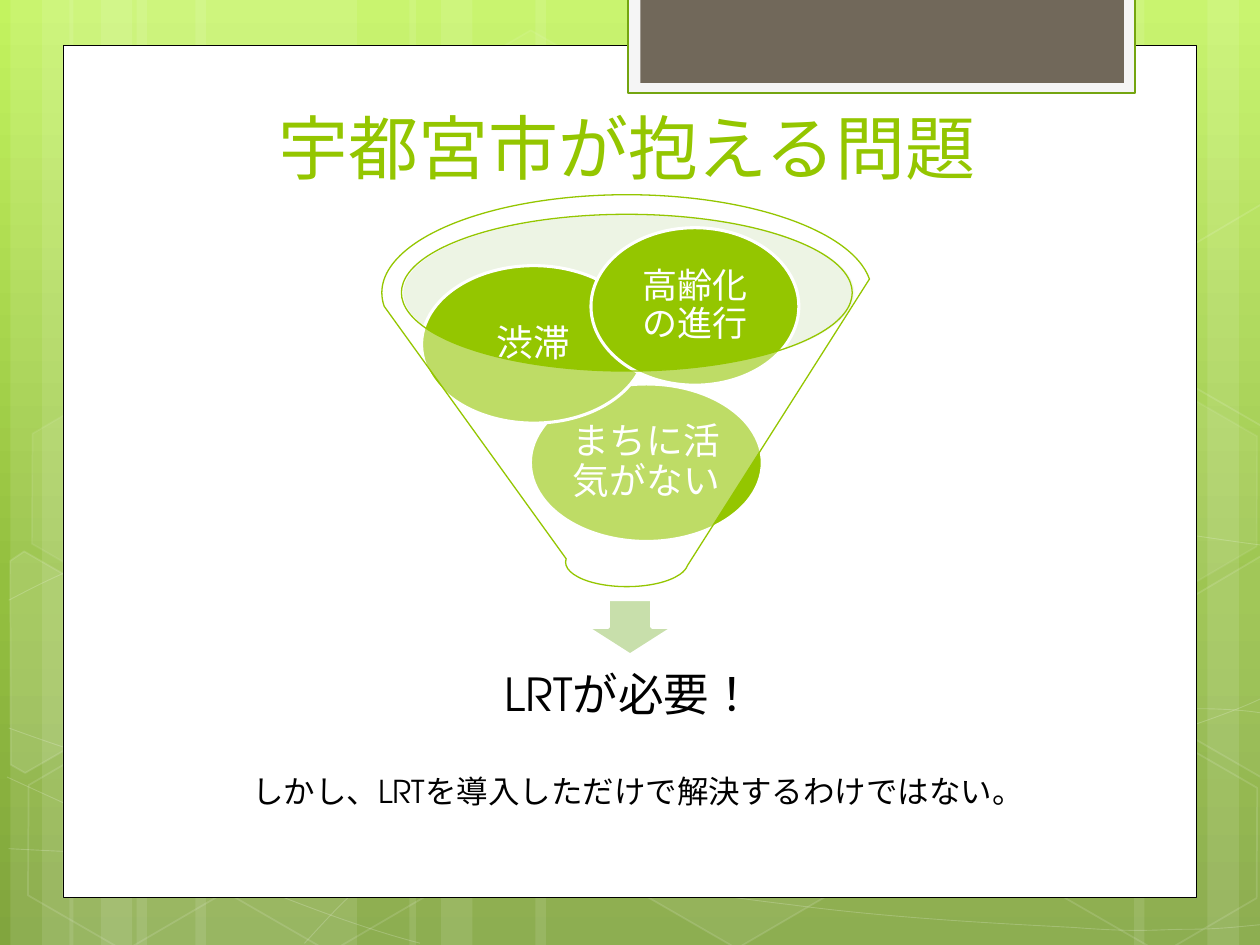
from copy import deepcopy

from lxml import etree
from pptx import Presentation
from pptx.dml.color import RGBColor
from pptx.enum import lang, shapes, text
from pptx.oxml.ns import qn
from pptx.util import Pt

FONT = "TeX Gyre Adventor"
WHITE = RGBColor(0xFF, 0xFF, 0xFF)
BLACK = RGBColor(0, 0, 0)
GREEN = RGBColor(0x94, 0xC6, 0x00)
DARK_GREEN = RGBColor(0x74, 0xA5, 0x10)
PALE_GREEN = RGBColor(0xD2, 0xE5, 0xBD)
ARROW_GREEN = RGBColor(0xC8, 0xDF, 0xAB)
LIGHT_GREY = RGBColor(0xF5, 0xF5, 0xF5)
BROWN = RGBColor(0x71, 0x68, 0x5A)
BACKDROP = [(0, RGBColor(0xC3, 0xF3, 0x5F)), (0.62, RGBColor(0x93, 0xBF, 0x3F)),
            (1, RGBColor(0x81, 0xA5, 0x3E))]

TITLE = "宇都宮市が抱える問題"
RESULT = "LRTが必要！"
CAVEAT = "しかし、LRTを導入しただけで解決するわけではない。"
# label, box, text size
PROBLEMS = [
    ("まちに活気がない", (303.1, 219.4, 132.5, 90), 21),
    ("渋滞", (240.9, 151.8, 128.2, 90), 21),
    ("高齢化の進行", (337.7, 130.1, 118.8, 90), 20),
]

# left, width of the translucent backdrop bars
BARS = [(78, 126), (6, 36), (24, 60), (111.6, 126), (39.6, 36), (57.6, 60),
        (528, 126), (690, 36), (648, 60), (306, 222), (234, 36), (252, 60)]
# start point, then (control, control, end) for each Bezier segment
CURVES = [
    ((5, 485), [(44, 487, 83, 489, 137, 488), (191, 487, 258, 486, 330, 479),
                (402, 472, 504, 458, 570, 444), (636, 431, 703, 409, 725, 397)]),
    ((5, 343), [(26, 332, 47, 321, 87, 310), (128, 300, 186, 284, 250, 279),
                (314, 274, 392, 273, 471, 279), (550, 284, 682, 307, 725, 312)]),
    ((4, 444), [(91, 484, 178, 523, 240, 539)]),
    ((5, 416), [(27, 424, 50, 432, 92, 444), (134, 454, 197, 472, 257, 485),
                (317, 497, 392, 510, 452, 517), (512, 525, 576, 528, 614, 530),
                (652, 533, 662, 531, 680, 531), (699, 531, 712, 529, 725, 528)]),
    ((174, 539), [(187, 525, 200, 510, 217, 498), (235, 485, 259, 470, 279, 460),
                  (300, 450, 312, 446, 338, 438), (364, 431, 413, 421, 438, 416),
                  (464, 411, 467, 411, 490, 410), (512, 408, 547, 405, 572, 405),
                  (597, 404, 638, 405, 638, 405), (654, 405, 670, 405, 686, 405),
                  (699, 405, 711, 406, 718, 407), (724, 408, 722, 407, 724, 408)]),
]
HEX_SIZE = (126, 109.4)
HEX_TILT = 30
# left, top, fill opacity, line opacity (percent)
HEXAGONS = [(240.5, 25.9, 4, 8), (357.8, 424.1, 6, 12), (7.9, 425.5, 0, 12),
            (10.1, 224.6, 7, 8), (125.3, 426.2, 0, 12), (542.2, 326.2, 10, 12),
            (600.5, 427, 0, 12), (600.5, 226.1, 7, 8)]
# hexagons cut off by the slide's edge, before tilting
LEFT_CUT = [(0, 8.7), (4.2, 0), (68, 0), (99.4, 55), (68, 109.4), (58.5, 109.4)]
RIGHT_CUT = [(0, 54.2), (30.5, 0), (37, 0), (97.9, 104), (94.5, 109.4), (31.5, 109.4)]
# outline, left, top, fill opacity
CUT_HEXAGONS = [(LEFT_CUT, -23.8, 330.5, 10), (RIGHT_CUT, 660.2, 319.7, 4),
                (RIGHT_CUT, 660.2, 118.8, 0)]

prs = Presentation()
prs.slide_width, prs.slide_height = Pt(720), Pt(540)
s = prs.slides.add_slide(prs.slide_layouts[5])
KIND = shapes.MSO_SHAPE


def paint(fill, color, opacity):
    """Fill with a colour; no colour or zero opacity leaves no fill."""
    if color is None or not opacity:
        fill.background()
        return
    fill.solid()
    fill.fore_color.rgb = color


def fade(parent, opacity):
    if 0 < opacity < 100:
        clr = parent.find(qn("a:solidFill")).find(qn("a:srgbClr"))
        etree.SubElement(clr, qn("a:alpha")).set("val", str(opacity * 1000))


def style(sp, fill=None, opacity=100, line=None, width=1, line_opacity=100):
    sp.shadow.inherit = False
    paint(sp.fill, fill, opacity)
    paint(sp.line.fill, line, line_opacity)
    props = sp.element.spPr
    if fill is not None:
        fade(props, opacity)
    if line is not None:
        sp.line.width = Pt(width)
        fade(props.find(qn("a:ln")), line_opacity)
    return sp


def add_preset(kind, box, **look):
    return style(s.shapes.add_shape(kind, *map(Pt, box)), **look)


def add_outline(points, closed, **look):
    first, *rest = [(Pt(x), Pt(y)) for x, y in points]
    builder = s.shapes.build_freeform(*first)
    builder.add_line_segments(rest, close=closed)
    return style(builder.convert_to_shape(), **look)


def add_curve(start, segments, **look):
    """Lay out all Bezier points, then join each three into one curve segment."""
    points = [start] + [seg[i:i + 2] for seg in segments for i in (0, 2, 4)]
    sp = add_outline(points, False, **look)
    lines = list(sp.element.iter(qn("a:lnTo")))
    for i in range(0, len(lines), 3):
        curve = etree.Element(qn("a:cubicBezTo"))
        lines[i].addprevious(curve)
        for line in lines[i:i + 3]:
            curve.append(line[0])
            line.getparent().remove(line)


def write(sp, words, size, color, anchor=text.MSO_ANCHOR.MIDDLE, inset=None, spacing=None):
    tf = sp.text_frame
    frame = {"word_wrap": True, "auto_size": text.MSO_AUTO_SIZE.NONE, "vertical_anchor": anchor}
    if inset is not None:
        sides = ("left", "top", "right", "bottom")
        frame.update({f"margin_{side}": Pt(inset) for side in sides})
    for name, value in frame.items():
        setattr(tf, name, value)
    p = tf.paragraphs[0]
    p.alignment = text.PP_ALIGN.CENTER
    if spacing:
        p.line_spacing = spacing
    r = p.add_run()
    r.text = words
    r.font.size, r.font.name = Pt(size), FONT
    r.font.language_id = lang.MSO_LANGUAGE_ID.JAPANESE
    r.font.color.rgb = color


# Background
backdrop = s.background.fill
backdrop.gradient()
backdrop.gradient_angle = 270
stop_list = s.element.find(".//" + qn("a:gsLst"))
stop_list.append(deepcopy(stop_list[0]))
for stop, (position, color) in zip(backdrop.gradient_stops, BACKDROP):
    stop.position = position
    stop.color.rgb = color

for left, width in BARS:
    add_preset(KIND.RECTANGLE, (left, 0, width, 540), fill=WHITE, opacity=10)
for start, segments in CURVES:
    add_curve(start, segments, line=WHITE, width=0.5, line_opacity=20)
for left, top, opacity, line_opacity in HEXAGONS:
    sp = add_preset(KIND.HEXAGON, (left, top, *HEX_SIZE), fill=WHITE, opacity=opacity,
                    line=WHITE, line_opacity=line_opacity)
    sp.adjustments[0] = 0.285
    sp.rotation = HEX_TILT
for outline, left, top, opacity in CUT_HEXAGONS:
    sp = add_outline([(left + x, top + y) for x, y in outline], True, fill=WHITE,
                     opacity=opacity, line=WHITE, line_opacity=12)
    sp.rotation = HEX_TILT

# Panel and tab
add_preset(KIND.RECTANGLE, (36, 25.9, 648, 487.2), fill=WHITE, line=BLACK, width=0.5)
add_preset(KIND.RECTANGLE, (359, -1.4, 289.7, 54.7), fill=LIGHT_GREY, line=DARK_GREEN, width=1.25)
add_preset(KIND.RECTANGLE, (366, -1.4, 276.2, 48.8), fill=BROWN)

# Funnel diagram
add_preset(KIND.OVAL, (230.4, 122.8, 257.8, 89.3), fill=PALE_GREEN, opacity=40)
add_preset(KIND.DOWN_ARROW, (335.2, 342.6, 49.7, 31.7), fill=ARROW_GREEN, line=WHITE, width=1.75)
result = s.shapes.add_textbox(Pt(240), Pt(368), Pt(240), Pt(60))
write(result, RESULT, 26, BLACK, inset=14.4, spacing=0.9)
for words, box, size in PROBLEMS:
    sp = add_preset(KIND.OVAL, box, fill=GREEN, line=WHITE, width=1.75)
    write(sp, words, size, WHITE, inset=2, spacing=0.9)
add_preset(KIND.FUNNEL, (218.2, 111.3, 280, 224), fill=WHITE, opacity=40, line=GREEN, width=0.75)

caveat = s.shapes.add_textbox(Pt(81.2), Pt(437.8), Pt(566.5), Pt(29))
write(caveat, CAVEAT, 18, BLACK, anchor=text.MSO_ANCHOR.TOP)

title = s.shapes.title
title.left, title.top, title.width, title.height = map(Pt, (81.1, 49, 554.4, 62.6))
write(title, TITLE, 40, GREEN, anchor=text.MSO_ANCHOR.BOTTOM)
s.shapes.element.append(title.element)  # bring in front of the panel

prs.save("out.pptx")
